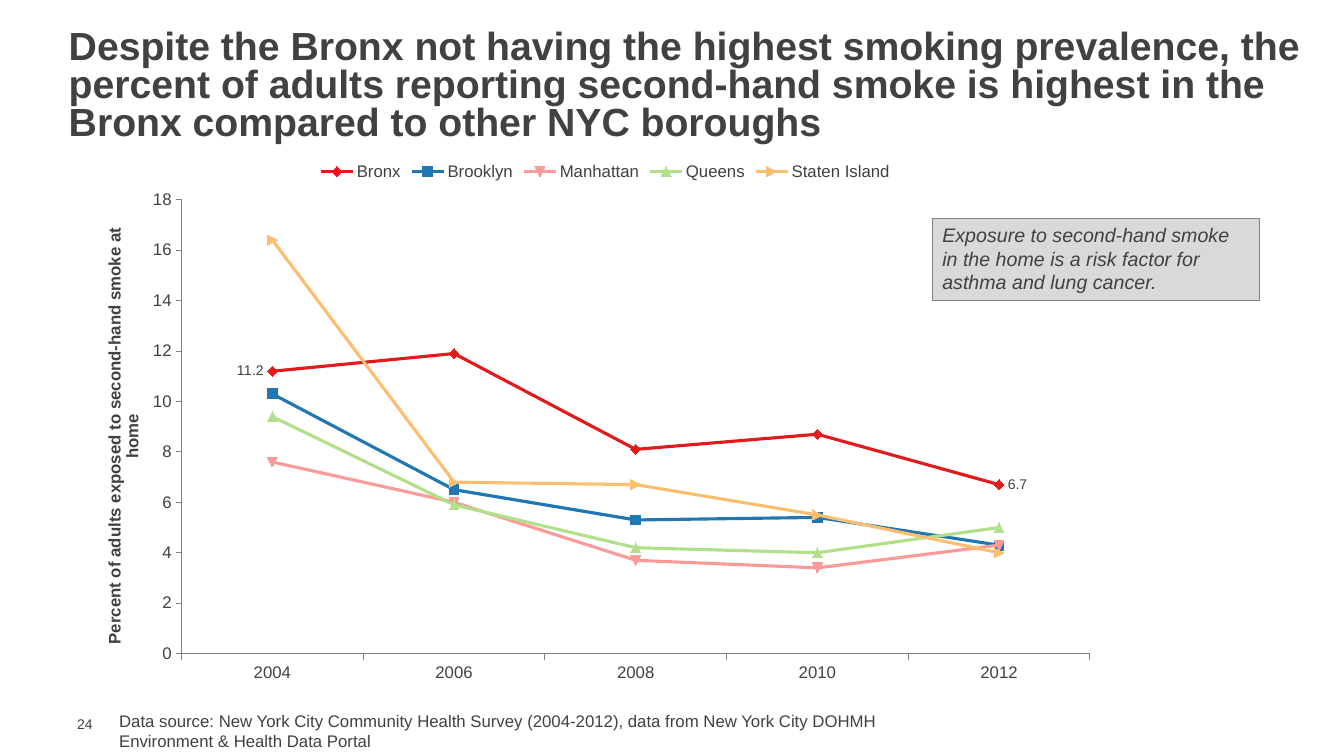
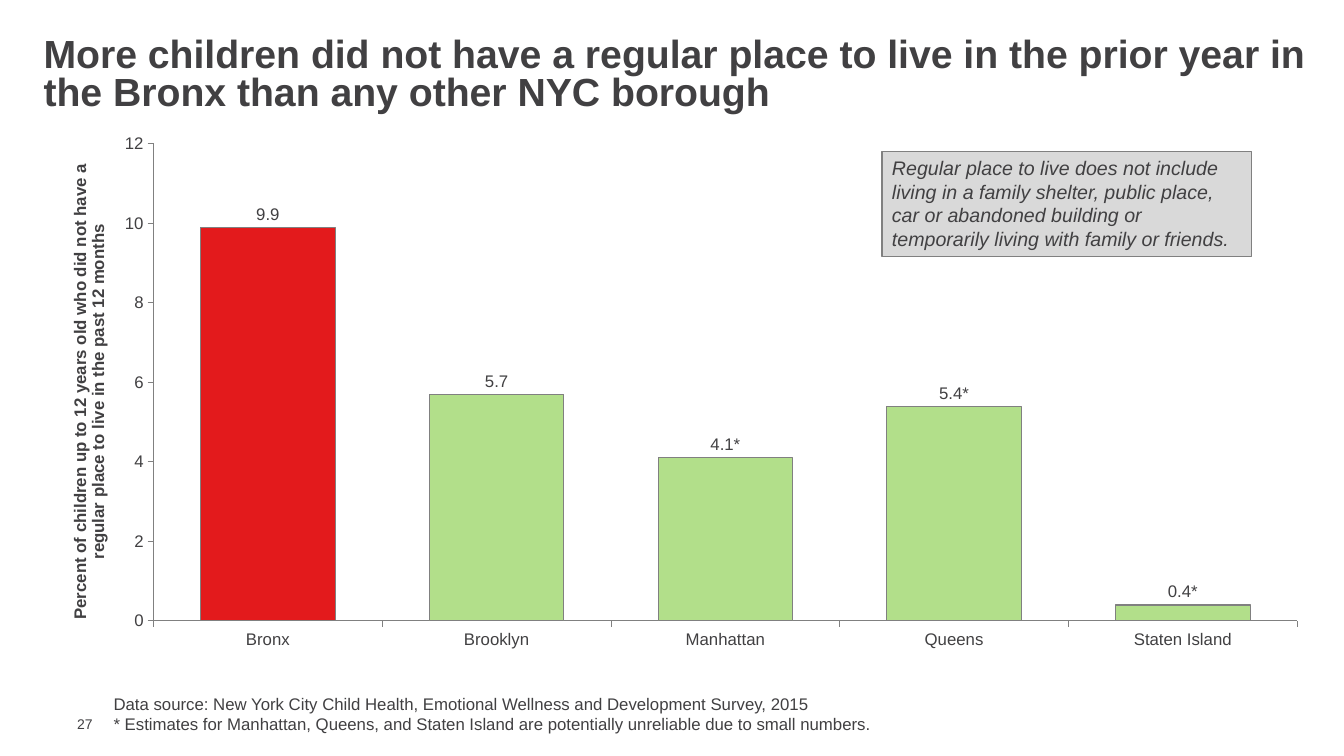
from pptx import Presentation
from pptx.chart.data import CategoryChartData
from pptx.dml.color import RGBColor
from pptx.enum.chart import XL_CHART_TYPE, XL_LABEL_POSITION, XL_LEGEND_POSITION, XL_MARKER_STYLE
from pptx.enum.shapes import MSO_SHAPE
from pptx.enum.text import MSO_ANCHOR, PP_ALIGN
from pptx.oxml import parse_xml
from pptx.oxml.ns import nsdecls
from pptx.util import Pt

FONT = "Arial"
COLORS = {
    "text": "414042", "rule": "808080", "note": "D9D9D9", "red": "E31A1C",
    "blue": "1F78B4", "pink": "FB9A99", "green": "B2DF8A", "orange": "FDBF6F",
}


def rgb(name):
    """Return the named colour."""
    return RGBColor.from_string(COLORS[name])


def style_font(font, size, bold=False, italic=False):
    """Set the shared typeface and text colour."""
    font.name, font.size, font.bold, font.italic = FONT, Pt(size), bold, italic
    font.color.rgb = rgb("text")


def style_line(line, color="rule", width=0.75):
    """Set a line's colour and width."""
    line.color.rgb = rgb(color)
    line.width = Pt(width)


def write(sp, text, size=12, bold=False, italic=False, anchor=MSO_ANCHOR.TOP, spacing=None):
    """Write one paragraph per line of text into a shape."""
    tf = sp.text_frame
    tf.word_wrap = True
    tf.vertical_anchor = anchor
    for i, line in enumerate(text.split("\n")):
        p = tf.add_paragraph() if i else tf.paragraphs[0]
        p.alignment = PP_ALIGN.LEFT
        p.line_spacing = spacing
        r = p.add_run()
        r.text = line
        style_font(r.font, size, bold, italic)
    return tf


def add_text(s, box, text, **fmt):
    """Add a text box at left, top, width, height."""
    return write(s.shapes.add_textbox(*map(Pt, box)), text, **fmt)


def add_title(s, box, text):
    """Add the slide title."""
    add_text(s, box, text, size=28, bold=True, anchor=MSO_ANCHOR.MIDDLE, spacing=0.8)


def add_number(s, number):
    """Add the slide number at its fixed place."""
    tf = add_text(s, (48, 511, 31, 12), str(number), size=10, anchor=MSO_ANCHOR.MIDDLE)
    tf.margin_top = tf.margin_right = tf.margin_bottom = 0


def add_note(s, box, text):
    """Add the grey note box."""
    sp = s.shapes.add_shape(MSO_SHAPE.RECTANGLE, *map(Pt, box))
    sp.shadow.inherit = False
    sp.fill.solid()
    sp.fill.fore_color.rgb = rgb("note")
    style_line(sp.line)
    write(sp, text, size=14, italic=True)


def set_plot_box(chart, box):
    """Fix the inner plot area as fractions of the chart."""
    area = chart._chartSpace.chart.plotArea
    for old in area.xpath("c:layout"):
        area.remove(old)
    parts = "".join(f'<c:{k} val="{v}"/>' for k, v in zip("xywh", box))
    area.insert(0, parse_xml(
        f'<c:layout {nsdecls("c")}><c:manualLayout><c:layoutTarget val="inner"/>'
        f'<c:xMode val="edge"/><c:yMode val="edge"/>{parts}</c:manualLayout></c:layout>'))


def add_chart(s, box, kind, cats, series, plot_box, top, axis_title, fmt):
    """Add a chart with the shared axis style."""
    data = CategoryChartData()
    data.categories = cats
    for name, values in series:
        data.add_series(name, values)
    chart = s.shapes.add_chart(kind, *map(Pt, box), data).chart
    chart.has_title = chart.has_legend = False
    style_font(chart.font, 12)
    chart.plots[0].vary_by_categories = False
    for axis in (chart.category_axis, chart.value_axis):
        axis.has_major_gridlines = False
        style_line(axis.format.line)
        style_font(axis.tick_labels.font, 12)
    axis = chart.value_axis
    axis.minimum_scale, axis.maximum_scale, axis.major_unit = 0, top, 2
    axis.tick_labels.number_format = fmt
    axis.tick_labels.number_format_is_linked = False
    r = axis.axis_title.text_frame.paragraphs[0].add_run()
    r.text = axis_title
    style_font(r.font, 12, bold=True)
    for body in chart._chartSpace.xpath(".//c:valAx/c:title//a:bodyPr"):
        body.set("rot", "-5400000")
        body.set("vert", "horz")
    set_plot_box(chart, plot_box)
    return chart


def add_smoke_chart(s, box):
    """Add the line chart of second-hand smoke by borough."""
    auto = XL_MARKER_STYLE.AUTOMATIC
    boroughs = [
        ("Bronx", (11.2, 11.9, 8.1, 8.7, 6.7), "red", XL_MARKER_STYLE.DIAMOND),
        ("Brooklyn", (10.3, 6.5, 5.3, 5.4, 4.3), "blue", XL_MARKER_STYLE.SQUARE),
        ("Manhattan", (7.6, 6, 3.7, 3.4, 4.3), "pink", auto),
        ("Queens", (9.4, 5.9, 4.2, 4, 5), "green", auto),
        ("Staten Island", (16.4, 6.8, 6.7, 5.5, 4), "orange", auto),
    ]
    chart = add_chart(
        s, box, XL_CHART_TYPE.LINE_MARKERS, [str(y) for y in range(2004, 2013, 2)],
        [b[:2] for b in boroughs], (0.08, 0.09, 0.9, 0.84), 18,
        "Percent of adults exposed to second-hand smoke at home", "#,##0")
    chart.has_legend = True
    chart.legend.position = XL_LEGEND_POSITION.TOP
    chart.legend.include_in_layout = False
    style_font(chart.legend.font, 12)
    for line, (_, _, color, marker) in zip(chart.series, boroughs):
        line.smooth = False
        style_line(line.format.line, color, 2.25)
        line.marker.style, line.marker.size = marker, 7
        line.marker.format.fill.solid()
        line.marker.format.fill.fore_color.rgb = rgb(color)
        style_line(line.marker.format.line, color)
    bronx = chart.series[0]
    for i, side in ((0, XL_LABEL_POSITION.LEFT), (4, XL_LABEL_POSITION.RIGHT)):
        label = bronx.points[i].data_label
        style_font(label.font, 10)
        label.position = side


def add_housing_chart(s, box):
    """Add the column chart of children without a regular place to live."""
    values = (9.9, 5.7, 4.1, 5.4, 0.4)
    chart = add_chart(
        s, box, XL_CHART_TYPE.COLUMN_CLUSTERED,
        ("Bronx", "Brooklyn", "Manhattan", "Queens", "Staten Island"),
        [("Series 1", values)], (0.07, 0.03, 0.92, 0.8), 12,
        "Percent of children up to 12 years old who did not have a "
        "regular place to live in the past 12 months", "0")
    chart.plots[0].gap_width = 70
    bars = chart.series[0]
    for bar, color in ((bars, "green"), (bars.points[0], "red")):
        bar.format.fill.solid()
        bar.format.fill.fore_color.rgb = rgb(color)
        style_line(bar.format.line)
    labels = bars.data_labels
    labels.show_value = True
    labels.number_format, labels.number_format_is_linked = "#,##0.0", False
    labels.position = XL_LABEL_POSITION.OUTSIDE_END
    style_font(labels.font, 12)
    for i in (2, 3, 4):
        label = bars.points[i].data_label
        r = label.text_frame.paragraphs[0].add_run()
        r.text = f"{values[i]}*"
        style_font(r.font, 12)
        label.position = XL_LABEL_POSITION.OUTSIDE_END


def smoke_slide(s):
    """Build the second-hand smoke slide."""
    add_number(s, 24)
    add_title(s, (42, 18, 907, 88.5),
              "Despite the Bronx not having the highest smoking prevalence, the percent of adults "
              "reporting second-hand smoke is highest in the Bronx compared to other NYC boroughs")
    add_smoke_chart(s, (72, 108, 721, 386))
    add_text(s, (78, 504, 714, 36),
             "Data source: New York City Community Health Survey (2004-2012), data from New York City "
             "DOHMH\nEnvironment & Health Data Portal")
    add_note(s, (666, 156, 234, 58.5),
             "Exposure to second-hand smoke in the home is a risk factor for asthma and lung cancer.")


def housing_slide(s):
    """Build the regular place to live slide."""
    add_number(s, 27)
    add_title(s, (24, 24, 924, 61),
              "More children did not have a regular place to live in the prior year in the Bronx "
              "than any other NYC borough")
    add_housing_chart(s, (47.5, 90, 888, 426))
    add_text(s, (74, 492, 724, 36),
             "Data source: New York City Child Health, Emotional Wellness and Development Survey, 2015\n"
             "* Estimates for Manhattan, Queens, and Staten Island are potentially unreliable "
             "due to small numbers.")
    add_note(s, (630, 108, 264, 75),
             "Regular place to live does not include living in a family shelter, public place, car or "
             "abandoned building or temporarily living with family or friends.")


def main():
    """Build and save the presentation."""
    prs = Presentation()
    prs.slide_width, prs.slide_height = Pt(960), Pt(540)
    for build in (smoke_slide, housing_slide):
        build(prs.slides.add_slide(prs.slide_layouts[6]))
    prs.save("out.pptx")


if __name__ == "__main__":
    main()
